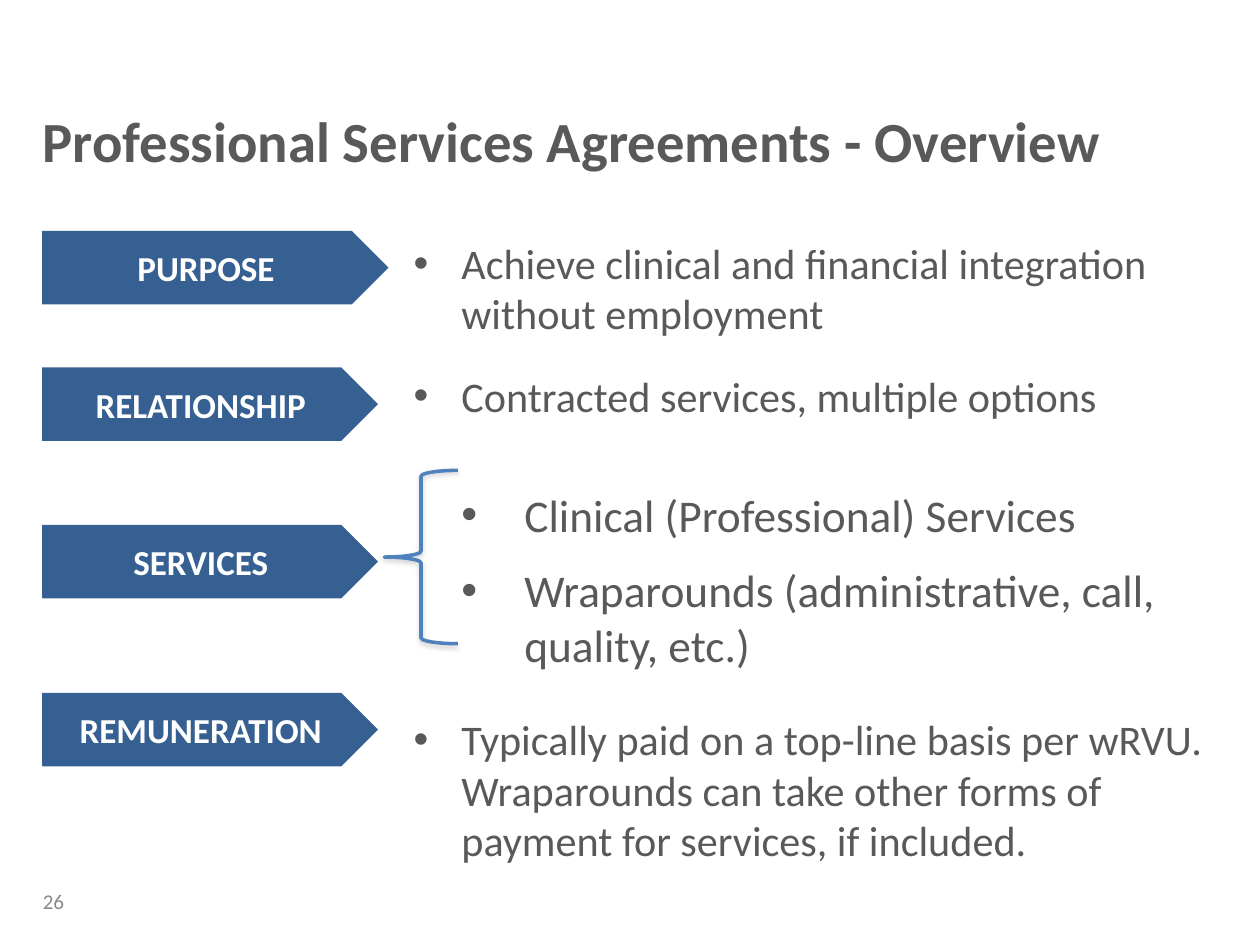
import pptx
import pptx.dml.color
import pptx.enum.shapes
import pptx.enum.text
import pptx.oxml
import pptx.oxml.ns
import pptx.util

RGBColor = pptx.dml.color.RGBColor
Pt = pptx.util.Pt
Inches = pptx.util.Inches
SHAPE = pptx.enum.shapes.MSO_SHAPE
ANCHOR = pptx.enum.text.MSO_ANCHOR
ALIGN = pptx.enum.text.PP_ALIGN

WHITE = RGBColor(0xFF, 0xFF, 0xFF)
NAVY = RGBColor(0x37, 0x60, 0x92)
BLUE = RGBColor(0x4F, 0x81, 0xBD)
DARK_GRAY = RGBColor(0x59, 0x59, 0x59)
LIGHT_GRAY = RGBColor(0x89, 0x89, 0x89)

FONT = "Calibri"
WIDTH, HEIGHT = Inches(10), Inches(7.5)
COLUMNS, ROWS = 120, 90

TOPICS = [
    ("PURPOSE", 22, 33),
    ("RELATIONSHIP", 35, 32),
    ("SERVICES", 50, 32),
    ("REMUNERATION", 66, 32),
]

DETAILS = [
    ("Achieve clinical and financial integration without employment", 0, 0),
    ("Contracted services, multiple options", 0, 18),
    ("Clinical (Professional) Services", 1, 38),
    ("Wraparounds (administrative, call, quality, etc.)", 1, 12),
    ("Typically paid on a top-line basis per wRVU. Wraparounds can take "
     "other forms of payment for services, if included.", 0, 24),
]
LEVELS = [(24.1, 0.38, 0.38), (25.9, 0.88, 0.5)]


def grid(column, row, columns, rows):
    return (int(WIDTH * column / COLUMNS), int(HEIGHT * row / ROWS),
            int(WIDTH * columns / COLUMNS), int(HEIGHT * rows / ROWS))


def write(paragraph, text, size, color, bold=False):
    paragraph.text = text
    for run in paragraph.runs:
        run.font.name = FONT
        run.font.size = Pt(size)
        run.font.bold = bold
        run.font.color.rgb = color


def add_text(slide, place, anchor):
    frame = slide.shapes.add_textbox(*grid(*place)).text_frame
    frame.word_wrap = True
    frame.vertical_anchor = anchor
    return frame


def add_topic(slide, label, row, columns):
    arrow = slide.shapes.add_shape(SHAPE.PENTAGON, *grid(4, row, columns, 7))
    arrow.shadow.inherit = False
    arrow.fill.solid()
    arrow.fill.fore_color.rgb = NAVY
    arrow.line.fill.background()
    arrow.text_frame.vertical_anchor = ANCHOR.MIDDLE
    caption = arrow.text_frame.paragraphs[0]
    write(caption, label, 20, WHITE, True)
    caption.alignment = ALIGN.CENTER


def add_bullet(paragraph, margin, hanging):
    properties = paragraph._p.get_or_add_pPr()
    properties.set("marL", str(Inches(margin)))
    properties.set("indent", str(-Inches(hanging)))
    for tag, key, value in (("buFont", "typeface", "Arial"), ("buChar", "char", "•")):
        properties.append(pptx.oxml.parse_xml(
            f'<a:{tag} {pptx.oxml.ns.nsdecls("a")} {key}="{value}"/>'))


def add_details(slide):
    frame = add_text(slide, (38.2, 22, 77.6, 63.2), ANCHOR.TOP)
    for index, (text, level, gap) in enumerate(DETAILS):
        paragraph = frame.add_paragraph() if index else frame.paragraphs[0]
        size, margin, hanging = LEVELS[level]
        paragraph.level = level
        add_bullet(paragraph, margin, hanging)
        paragraph.space_before = Pt(gap)
        write(paragraph, text, size, DARK_GRAY)


def add_brace(slide):
    brace = slide.shapes.add_shape(SHAPE.LEFT_BRACE, *grid(36.6, 44.8, 7, 16.5))
    brace.adjustments[0] = 0.08
    brace.adjustments[1] = 0.5
    brace.fill.background()
    brace.line.color.rgb = BLUE
    brace.line.width = Pt(2)
    brace.shadow.inherit = False
    effects = brace._element.spPr.find(pptx.oxml.ns.qn("a:effectLst"))
    effects.append(pptx.oxml.parse_xml(
        f'<a:outerShdw {pptx.oxml.ns.nsdecls("a")} blurRad="{Pt(3.1)}" '
        f'dist="{Pt(1.6)}" dir="5400000" rotWithShape="0">'
        '<a:srgbClr val="808080"><a:alpha val="38000"/></a:srgbClr></a:outerShdw>'))


def main():
    deck = pptx.Presentation()
    deck.slide_width, deck.slide_height = WIDTH, HEIGHT
    slide = deck.slides.add_slide(deck.slide_layouts[6])

    number = add_text(slide, (2.9, 83.4, 23.8, 4.8), ANCHOR.MIDDLE)
    write(number.paragraphs[0], "26", 12, LIGHT_GRAY)

    title = add_text(slide, (2.9, 10.1, 111.1, 12.5), ANCHOR.TOP)
    title.margin_top = 0
    write(title.paragraphs[0], "Professional Services Agreements - Overview",
          32.4, DARK_GRAY, True)

    add_details(slide)
    for topic in TOPICS:
        add_topic(slide, *topic)
    add_brace(slide)
    deck.save("out.pptx")


if __name__ == "__main__":
    main()
